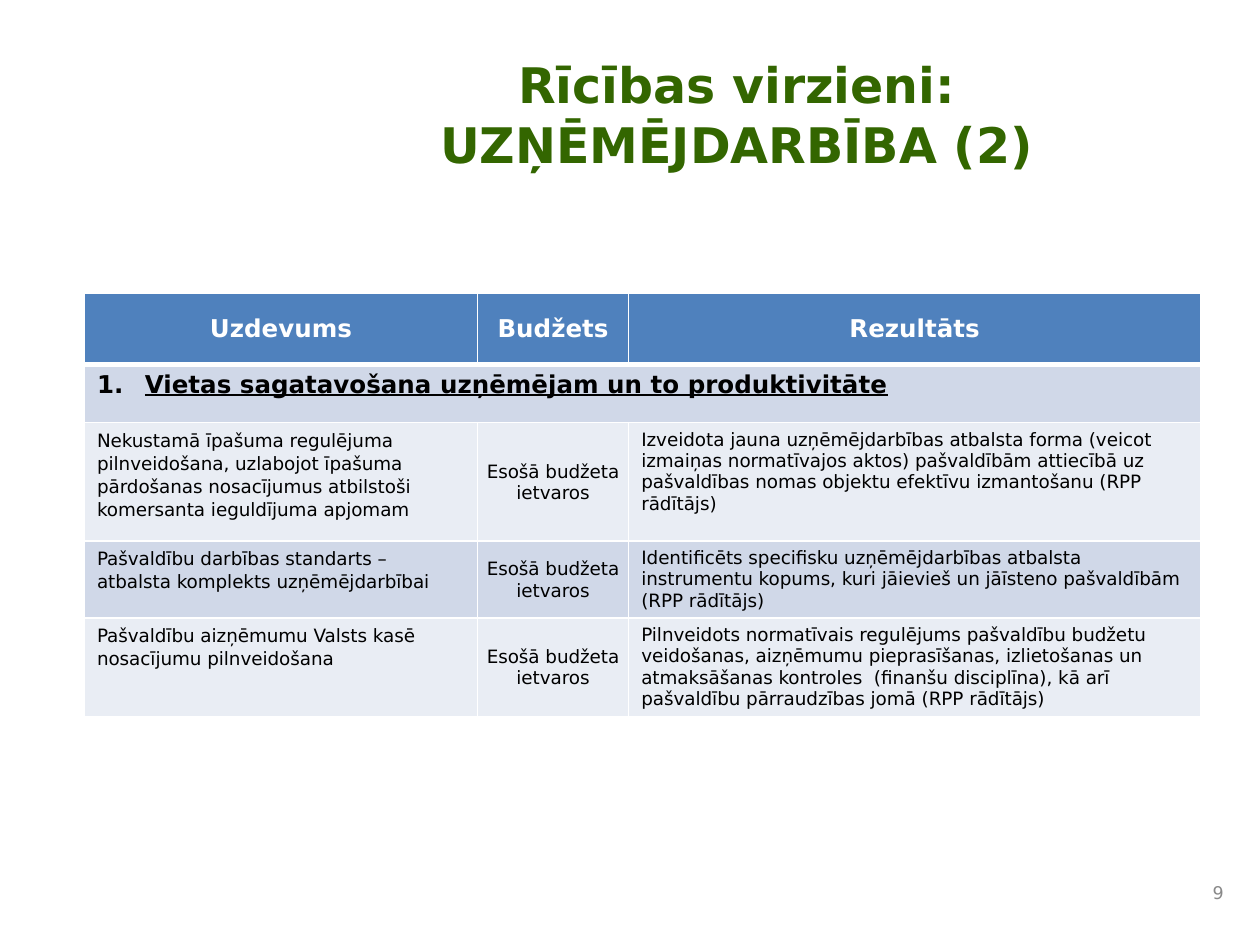
from dataclasses import dataclass

from lxml.etree import SubElement
from pptx import Presentation
from pptx.dml.color import RGBColor
from pptx.enum.text import MSO_ANCHOR, MSO_AUTO_SIZE, PP_ALIGN
from pptx.oxml.ns import qn
from pptx.util import Inches, Pt

WIDE, HIGH = 10, 7.5
FONT = "DejaVu Sans"
HUES = {
    "green": "336600", "blue": "4F81BD", "band": "D0D8E8", "pale": "E9EDF4",
    "white": "FFFFFF", "black": "000000", "gray": "898989",
}
COLS = (3.12, 1.2, 4.54)
ROWS = (0.57, 0.46, 0.94, 0.27, 0.32)
HEADS = ("Uzdevums", "Budžets", "Rezultāts")
THEME = "Vietas sagatavošana uzņēmējam un to produktivitāte"
FUNDS = "Esošā budžeta ietvaros"


@dataclass(frozen=True)
class Look:
    size: float
    hue: str = "black"
    bold: bool = False
    line: bool = False
    align: PP_ALIGN = PP_ALIGN.LEFT
    space: float = 1.0


@dataclass(frozen=True)
class Task:
    name: str
    result: str


HEAD = Look(14, "white", bold=True, align=PP_ALIGN.CENTER)
TOPIC = Look(14, bold=True, line=True)
DUTY = Look(10.5, space=1.07)
FUND = Look(10.5, align=PP_ALIGN.CENTER)
PLAIN = Look(10.5)

TASKS = (
    Task("Nekustamā īpašuma regulējuma pilnveidošana, uzlabojot īpašuma "
         "pārdošanas nosacījumus atbilstoši komersanta ieguldījuma apjomam",
         "Izveidota jauna uzņēmējdarbības atbalsta forma (veicot izmaiņas "
         "normatīvajos aktos) pašvaldībām attiecībā uz pašvaldības nomas "
         "objektu efektīvu izmantošanu (RPP rādītājs)"),
    Task("Pašvaldību darbības standarts – atbalsta komplekts uzņēmējdarbībai",
         "Identificēts specifisku uzņēmējdarbības atbalsta instrumentu "
         "kopums, kuri jāievieš un jāīsteno pašvaldībām (RPP rādītājs)"),
    Task("Pašvaldību aizņēmumu Valsts kasē nosacījumu pilnveidošana",
         "Pilnveidots normatīvais regulējums pašvaldību budžetu veidošanas, "
         "aizņēmumu pieprasīšanas, izlietošanas un atmaksāšanas kontroles  "
         "(finanšu disciplīna), kā arī pašvaldību pārraudzības jomā "
         "(RPP rādītājs)"),
)


def place(left: float, top: float, width: float, height: float) -> tuple:
    """Turn shares of the slide's size into lengths."""
    return (Inches(left * WIDE), Inches(top * HIGH),
            Inches(width * WIDE), Inches(height * HIGH))


def write(frame, text: str, look: Look) -> None:
    frame.word_wrap = True
    para = frame.paragraphs[0]
    para.alignment = look.align
    para.line_spacing = look.space
    run = para.add_run()
    run.text = text
    font = run.font
    font.name, font.size = FONT, Pt(look.size)
    font.bold, font.underline = look.bold, look.line
    font.color.rgb = RGBColor.from_string(HUES[look.hue])


def edge(cell, base: float = 1) -> None:
    """Draw white borders, with a base line of its own weight."""
    props = cell._tc.get_or_add_tcPr()
    for spot, (side, size) in enumerate(
            (("L", 1), ("R", 1), ("T", 1), ("B", base))):
        line = SubElement(props, qn(f"a:ln{side}"), w=str(Pt(size)))
        fill = SubElement(line, qn("a:solidFill"))
        SubElement(fill, qn("a:srgbClr"), val=HUES["white"])
        props.insert(spot, line)


def paint(cell, text: str, look: Look, hue: str, base: float = 1) -> None:
    cell.fill.solid()
    cell.fill.fore_color.rgb = RGBColor.from_string(HUES[hue])
    edge(cell, base)
    write(cell.text_frame, text, look)
    if look.align == PP_ALIGN.CENTER:
        cell.vertical_anchor = MSO_ANCHOR.MIDDLE


def number(para) -> None:
    props = para._p.get_or_add_pPr()
    props.set("marL", str(Inches(0.38)))
    props.set("indent", str(Inches(-0.38)))
    SubElement(props, qn("a:buFont"), typeface="+mj-lt")
    SubElement(props, qn("a:buAutoNum"), type="arabicPeriod")


def fill_grid(grid) -> None:
    for col, width in zip(grid.columns, COLS):
        col.width = Inches(width)
    for row, height in zip(grid.rows, ROWS):
        row.height = Inches(height)

    # Header and topic rows
    for col, text in enumerate(HEADS):
        paint(grid.cell(0, col), text, HEAD, "blue", base=3)
    topic = grid.cell(1, 0)
    topic.merge(grid.cell(1, len(COLS) - 1))
    number(topic.text_frame.paragraphs[0])
    paint(topic, THEME, TOPIC, "band")

    # Task rows in two shades
    for row, task in enumerate(TASKS, start=2):
        hue = "band" if row % 2 else "pale"
        paint(grid.cell(row, 0), task.name, DUTY, hue)
        fund = grid.cell(row, 1)
        paint(fund, FUNDS, FUND, hue)
        fund.margin_left = fund.margin_right = fund.margin_top = Inches(0.01)
        fund.margin_bottom = 0
        paint(grid.cell(row, 2), task.result, PLAIN, hue)


def main() -> None:
    deck = Presentation()
    deck.slide_width, deck.slide_height = Inches(WIDE), Inches(HIGH)
    slide = deck.slides.add_slide(deck.slide_layouts[5])

    # Title
    title = slide.shapes.title
    title.left, title.top, title.width, title.height = place(
        0.224, 0.045, 0.721, 0.121)
    frame = title.text_frame
    frame.auto_size = MSO_AUTO_SIZE.NONE
    frame.vertical_anchor = MSO_ANCHOR.TOP
    frame.margin_top = Inches(0.08)
    write(frame, "Rīcības virzieni: UZŅĒMĒJDARBĪBA (2)",
          Look(28, "green", bold=True, align=PP_ALIGN.CENTER, space=1.03))

    # Table of tasks
    area = place(0.067, 0.31, sum(COLS) / WIDE, sum(ROWS) / HIGH)
    fill_grid(slide.shapes.add_table(len(ROWS), len(COLS), *area).table)

    # Page number
    page = slide.shapes.add_textbox(*place(0.933, 0.923, 0.048, 0.044))
    page.text_frame.vertical_anchor = MSO_ANCHOR.MIDDLE
    write(page.text_frame, "9", Look(10, "gray", align=PP_ALIGN.RIGHT))

    deck.save("out.pptx")


if __name__ == "__main__":
    main()
